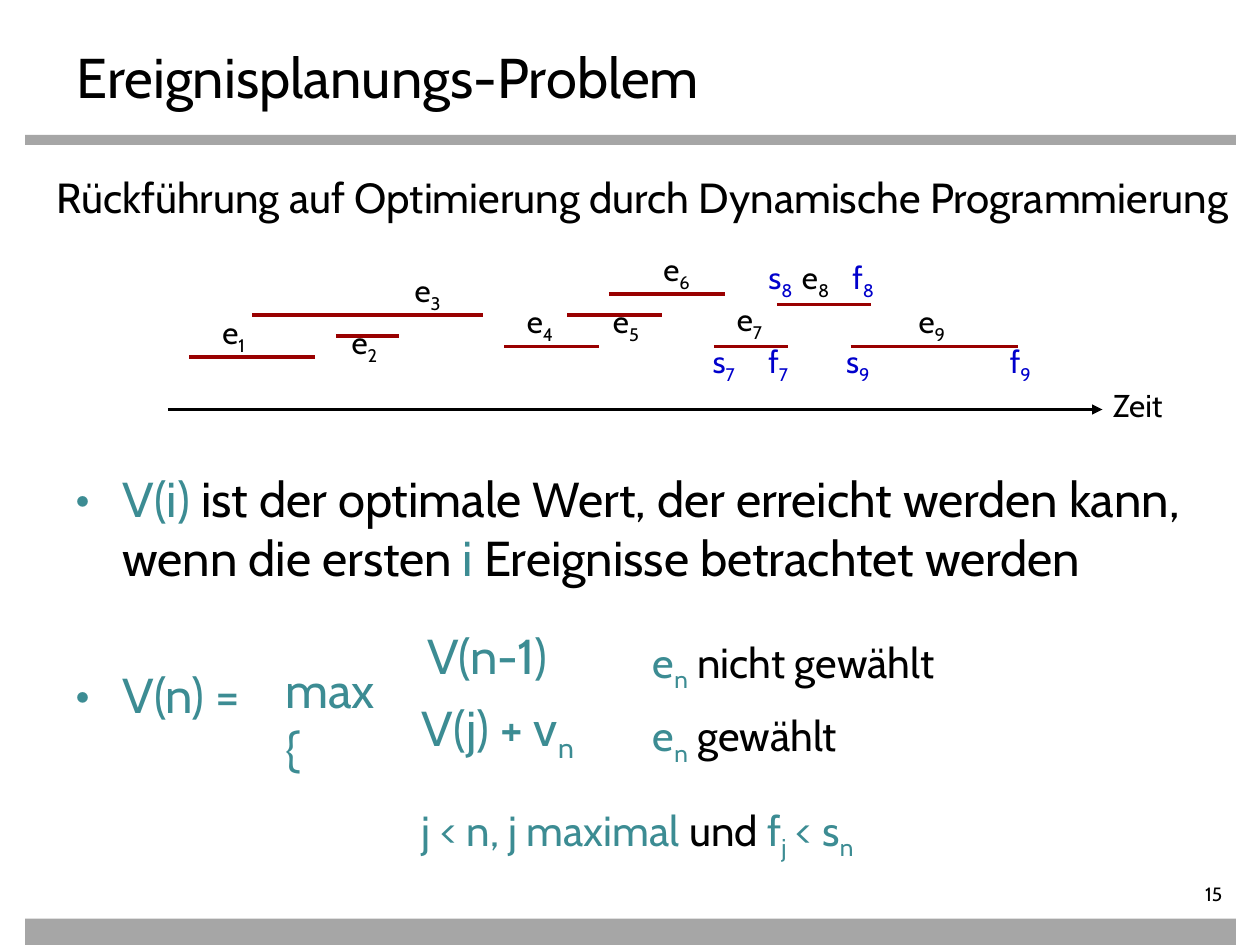
from lxml import etree
from pptx import Presentation
from pptx import util as u
from pptx.dml.color import RGBColor
from pptx.enum import shapes, text
from pptx.oxml.ns import qn

COLORS = {"black": "000000", "teal": "3C8C93", "blue": "0000CC",
          "red": "990000", "gray": "A6A6A6"}
FONT = "Cabin"
CELL = u.Inches(1) / 12  # grid of 120 columns by 90 rows


def cells(*counts):
    return [u.Emu(round(count * CELL)) for count in counts]


def write(paragraph, size, runs):
    """Add runs of (text, colour name), with a third item for a subscript."""
    for content, color, *subscript in runs:
        run = paragraph.add_run()
        run.text = content
        run.font.name = FONT
        run.font.size = u.Pt(size)
        run.font.color.rgb = RGBColor.from_string(COLORS[color])
        if subscript:
            run.font._element.set("baseline", "-25000")


presentation = Presentation()
presentation.slide_width, presentation.slide_height = cells(120, 90)
slide = presentation.slides.add_slide(presentation.slide_layouts[5])

# Bars below the title and at the foot
for top, height in [(12.84, 0.96), (87.48, 2.52)]:
    bar = slide.shapes.add_shape(shapes.MSO_SHAPE.RECTANGLE, *cells(2.4, top, 115.3, height))
    bar.shadow.inherit = False
    bar.fill.solid()
    bar.fill.fore_color.rgb = RGBColor.from_string(COLORS["gray"])
    bar.line.fill.background()

title = slide.shapes.title
title.left, title.top, title.width, title.height = cells(6.1, 3.4, 108, 6.6)
title.text_frame.vertical_anchor = text.MSO_ANCHOR.TOP
title.text_frame.auto_size = text.MSO_AUTO_SIZE.NONE
title.text_frame.paragraphs[0].alignment = text.PP_ALIGN.LEFT
write(title.text_frame.paragraphs[0], 32, [("Ereignisplanungs-Problem", "black")])

# Time axis and events: start column, end column, row, colour, width
events = [(18, 30, 34), (24, 46, 30), (32, 38, 32), (48, 57, 33), (54, 63, 30),
          (58, 69, 28), (68, 75, 33), (74, 83, 29), (81, 97, 33)]
lines = [(16, 105, 39, "black", 1.5)] + [(*event, "red", 2.25) for event in events]
for start, end, row, color, width in lines:
    line = slide.shapes.add_connector(shapes.MSO_CONNECTOR.STRAIGHT,
                                      *cells(start, row, end, row))
    line.line.color.rgb = RGBColor.from_string(COLORS[color])
    line.line.width = u.Pt(width)
    if color == "black":
        etree.SubElement(line.line._get_or_add_ln(), qn("a:tailEnd"), type="triangle")
    etree.SubElement(line._element.spPr, qn("a:effectLst"))

# Event names e1 to e9, then start and finish times in pairs
event_labels = [(20, 29.2), (32.3, 30.2), (38.3, 25.2), (49, 28.2), (57.2, 28.2),
                (62, 23.2), (69, 28), (75.2, 24), (86.3, 28.2)]
labels = [(slide.shapes, "e", number, left, top, "black")
          for number, (left, top) in enumerate(event_labels, 1)]
for number, start, finish, top in [(9, 79.4, 95, 32), (8, 72, 80, 24), (7, 66.7, 72, 32)]:
    pair = slide.shapes.add_group_shape().shapes
    labels += [(pair, "s", number, start, top, "blue"), (pair, "f", number, finish, top, "blue")]
for parent, symbol, number, left, top, color in labels:
    label = parent.add_textbox(*cells(left, top, 6, 4.8))
    label.text_frame.word_wrap = True
    label.text_frame.margin_right = 0
    write(label.text_frame.paragraphs[0], 18, [(symbol, color), (str(number), color, True)])

# Free texts: left, top, width, height, wrap, size, runs
e_n = [("e", "teal"), ("n", "teal", True)]
notes = [
    (4.2, 15.7, 115.3, 6, False, 24,
     [("Rückführung auf Optimierung durch Dynamische Programmierung", "black")]),
    (104.8, 36.2, 7.4, 4.8, False, 18, [("Zeit", "black")]),
    (39.5, 59, 14.2, 6.8, False, 28, [("V(n-1)", "teal")]),
    (39, 65.8, 18, 6.8, False, 28, [("V(j) + v", "teal"), ("n", "teal", True)]),
    (26, 62.2, 12, 6.8, True, 28, [("max {", "teal")]),
    (61, 60, 30.1, 6, False, 24, e_n + [(" nicht gewählt", "black")]),
    (61, 67, 20.6, 6, False, 24, e_n + [(" gewählt", "black")]),
    (39, 76, 50.3, 6, True, 24,
     [("j < n, j maximal ", "teal"), ("und ", "black"), ("f", "teal"),
      ("j", "teal", True), (" < s", "teal"), ("n", "teal", True)]),
]
for left, top, width, height, wrap, size, runs in notes:
    note = slide.shapes.add_textbox(*cells(left, top, width, height))
    note.text_frame.word_wrap = wrap
    write(note.text_frame.paragraphs[0], size, runs)

# Definition of V as two bullets
body = slide.shapes.add_textbox(*cells(6, 44, 108, 36.4)).text_frame
body.word_wrap = True
bullets = [
    (0, [("V(i)", "teal"),
         (" ist der optimale Wert, der erreicht werden kann, wenn die ersten ", "black"),
         ("i", "teal"), (" Ereignisse betrachtet werden", "black")]),
    (45, [("V(n) =", "teal")]),
]
for index, (space, runs) in enumerate(bullets):
    paragraph = body.add_paragraph() if index else body.paragraphs[0]
    properties = paragraph._p.get_or_add_pPr()
    indent = cells(4.5)[0]
    properties.set("marL", str(indent))
    properties.set("indent", str(-indent))
    bullet_color = etree.SubElement(properties, qn("a:buClr"))
    etree.SubElement(bullet_color, qn("a:srgbClr"), val=COLORS["teal"])
    etree.SubElement(properties, qn("a:buFont"), typeface=FONT)
    etree.SubElement(properties, qn("a:buChar"), char="•")
    paragraph.space_before = u.Pt(space)
    write(paragraph, 28, runs)

number_box = slide.shapes.add_textbox(*cells(104.4, 84, 13.2, 2.6)).text_frame
number_box.word_wrap = True
number_box.margin_left = number_box.margin_top = number_box.margin_bottom = 0
number_box.paragraphs[0].alignment = text.PP_ALIGN.RIGHT
write(number_box.paragraphs[0], 11, [("15", "black")])

presentation.save("out.pptx")
